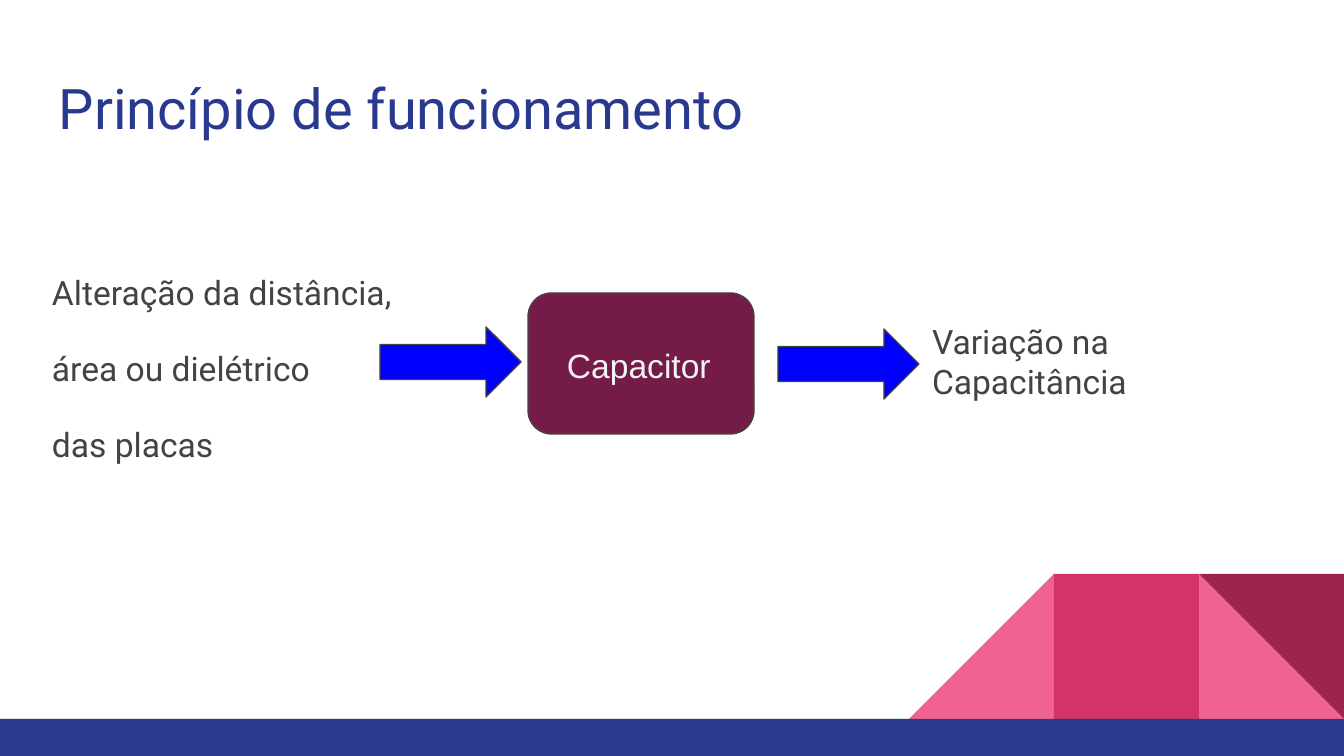
"""Builds the slide "Princípio de funcionamento"."""
import pptx
import pptx.util
import pptx.dml.color
from pptx.enum.shapes import MSO_SHAPE
from pptx.enum.text import MSO_ANCHOR

PX = 914400 / 134.4
WIDTH, HEIGHT = 1344, 756
TILE, BAND_TOP = 145, 719
INSET = 13

COLOURS = {
    "navy": "2A3990", "pink": "F06292", "rose": "D23369", "wine": "9C254D",
    "blue": "0000FF", "plum": "741B47", "grey": "434343", "pale": "F3F3F3",
}

TILES = [
    (2, MSO_SHAPE.RIGHT_TRIANGLE, 0, "pink"),
    (0, MSO_SHAPE.RIGHT_TRIANGLE, 270, "pink"),
    (1, MSO_SHAPE.RECTANGLE, 0, "rose"),
    (2, MSO_SHAPE.RIGHT_TRIANGLE, 180, "wine"),
]
STAGES = [
    (MSO_SHAPE.RIGHT_ARROW, (380, 327, 141, 70), "blue"),
    (MSO_SHAPE.RIGHT_ARROW, (778, 329, 141, 70), "blue"),
    (MSO_SHAPE.ROUNDED_RECTANGLE, (528, 293, 226, 141), "plum"),
]
TEXTS = [
    (["Princípio de funcionamento"], (46, 61, 1253, 89), "Roboto", 30, "navy", 1, 0),
    (["Alteração da distância,", "área ou dielétrico", "das placas"],
     (39, 253, 1253, 420), "Roboto", 18, "grey", 1.15, 16),
    (["Variação na", "Capacitância"], (919, 308, 226, 113), "Roboto", 18, "grey", 1, 0),
    (["Capacitor"], (554, 332, 191, 89), "Arial", 18, "pale", 1, 0),
]


def px(length):
    return round(length * PX)


def colour(name):
    return pptx.dml.color.RGBColor.from_string(COLOURS[name])


def add_figure(slide, preset, place, fill, outline=None, rotation=0):
    figure = slide.shapes.add_shape(preset, *map(px, place))
    figure.shadow.inherit = False
    figure.rotation = rotation
    figure.fill.solid()
    figure.fill.fore_color.rgb = colour(fill)
    if outline:
        figure.line.color.rgb = colour(outline)
        figure.line.width = pptx.util.Pt(0.75)
    else:
        figure.line.fill.background()


def add_text(slide, lines, place, font, size, ink, spacing, after):
    frame = slide.shapes.add_textbox(*map(px, place)).text_frame
    frame.word_wrap = True
    frame.vertical_anchor = MSO_ANCHOR.TOP
    frame.margin_left = frame.margin_right = px(INSET)
    frame.margin_top = frame.margin_bottom = px(INSET)
    frame.text = "\n".join(lines)
    for paragraph in frame.paragraphs:
        paragraph.line_spacing = spacing
        paragraph.space_after = pptx.util.Pt(after)
        paragraph.font.name = font
        paragraph.font.size = pptx.util.Pt(size)
        paragraph.font.color.rgb = colour(ink)


def main():
    deck = pptx.Presentation()
    deck.slide_width, deck.slide_height = px(WIDTH), px(HEIGHT)
    slide = deck.slides.add_slide(deck.slide_layouts[6])
    for column, preset, rotation, fill in TILES:
        left = WIDTH - (3 - column) * TILE
        place = (left, BAND_TOP - TILE, TILE, TILE)
        add_figure(slide, preset, place, fill, rotation=rotation)
    band = (0, BAND_TOP, WIDTH, HEIGHT - BAND_TOP)
    add_figure(slide, MSO_SHAPE.RECTANGLE, band, "navy")
    for preset, place, fill in STAGES:
        add_figure(slide, preset, place, fill, outline="grey")
    for text in TEXTS:
        add_text(slide, *text)
    deck.save("out.pptx")


if __name__ == "__main__":
    main()
